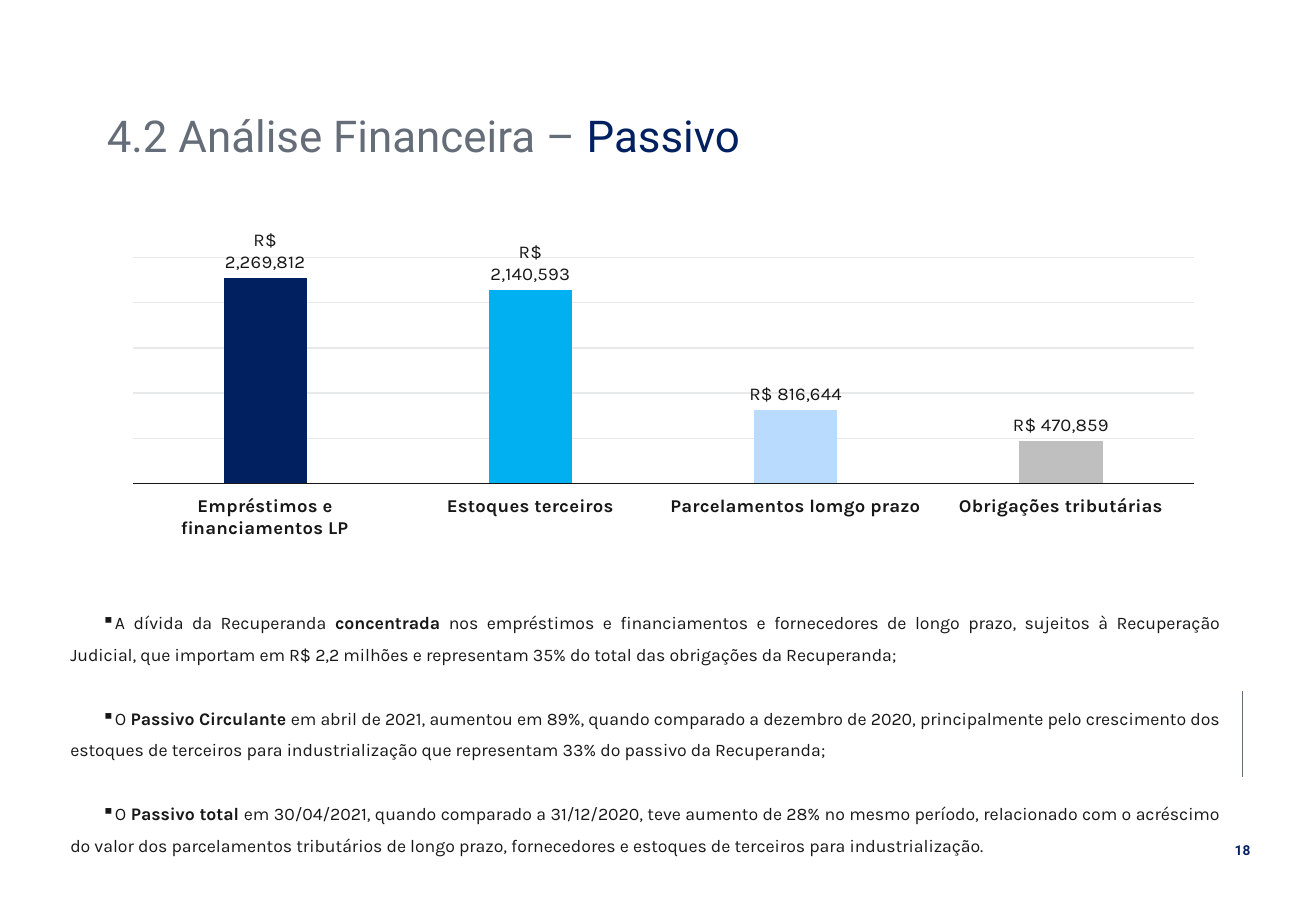
from dataclasses import dataclass

from lxml import etree
from pptx import Presentation
from pptx.chart.data import CategoryChartData
from pptx.dml.color import RGBColor
from pptx.enum.chart import XL_CHART_TYPE, XL_LABEL_POSITION, XL_TICK_LABEL_POSITION, XL_TICK_MARK
from pptx.enum.shapes import MSO_CONNECTOR
from pptx.enum.text import MSO_ANCHOR, PP_ALIGN
from pptx.oxml.ns import qn
from pptx.util import Pt

COLUMN = XL_CHART_TYPE.COLUMN_CLUSTERED
OUTSIDE = XL_LABEL_POSITION.OUTSIDE_END
LOW = XL_TICK_LABEL_POSITION.LOW
NO_TICK = XL_TICK_MARK.NONE
STRAIGHT = MSO_CONNECTOR.STRAIGHT
TOP, MIDDLE = MSO_ANCHOR.TOP, MSO_ANCHOR.MIDDLE
LEFT, CENTER, JUSTIFY = PP_ALIGN.LEFT, PP_ALIGN.CENTER, PP_ALIGN.JUSTIFY


@dataclass(frozen=True)
class Theme:
    head: str = "Roboto"
    body: str = "Karla"
    ink: str = "181717"
    gray: str = "656D78"
    navy: str = "002060"
    grid: str = "E7E9EB"
    bars: tuple = ("002060", "00B0F0", "B8DBFE", "BFBFBF")
    title_size: float = 26
    text_size: float = 10.5
    chart_size: float = 11
    page_size: float = 8.1


THEME = Theme()
MONEY = '"R$"\\ #,##0'
DEBTS = {
    "Empréstimos e financiamentos LP": 2269812,
    "Estoques terceiros": 2140593,
    "Parcelamentos lomgo prazo": 816644,
    "Obrigações tributárias": 470859,
}
NOTES = [
    ("A dívida da Recuperanda ", "concentrada",
     " nos empréstimos e financiamentos e fornecedores de longo prazo, sujeitos à "
     "Recuperação Judicial, que importam em R$ 2,2 milhões e representam 35% do total "
     "das obrigações da Recuperanda;"),
    ("O ", "Passivo Circulante ",
     "em abril de 2021, aumentou em 89%, quando comparado a dezembro de 2020, "
     "principalmente pelo crescimento dos estoques de terceiros para industrialização "
     "que representam 33% do passivo da Recuperanda;"),
    ("O ", "Passivo total ",
     "em 30/04/2021, quando comparado a 31/12/2020, teve aumento de 28% no mesmo período, "
     "relacionado com o acréscimo do valor dos parcelamentos tributários de longo prazo, "
     "fornecedores e estoques de terceiros para industrialização."),
]


def rgb(code):
    return RGBColor.from_string(code)


def style(font, face, size, color, bold=False):
    font.name = face
    font.size = Pt(size)
    font.bold = bold
    font.color.rgb = rgb(color)


def add_box(slide, x, y, w, h, anchor=TOP, wrap=True):
    frame = slide.shapes.add_textbox(Pt(x), Pt(y), Pt(w), Pt(h)).text_frame
    frame.word_wrap = wrap
    frame.vertical_anchor = anchor
    return frame


def add_run(para, text, face, size, color, bold=False):
    run = para.add_run()
    run.text = text
    style(run.font, face, size, color, bold)


def add_bullet(para, mark, indent):
    props = para._p.get_or_add_pPr()
    props.set("marL", "0")
    props.set("indent", str(Pt(indent)))
    etree.SubElement(props, qn("a:buChar")).set("char", mark)


def add_title(slide):
    para = add_box(slide, 56.2, 63, 589, 38, MIDDLE).paragraphs[0]
    para.alignment = LEFT
    para.line_spacing = 0.9
    for text, color in (("4.2 Análise Financeira – ", THEME.gray), ("Passivo", THEME.navy)):
        add_run(para, text, THEME.head, THEME.title_size, color)


def add_notes(slide):
    frame = add_box(slide, 34.6, 352.8, 696.2, 159.8)
    for index, parts in enumerate(NOTES):
        para = frame.add_paragraph() if index else frame.paragraphs[0]
        add_bullet(para, "▪", 18.7)
        para.alignment = JUSTIFY
        para.line_spacing = 1.5
        if index:
            para.space_before = Pt(18.9)
        for text, bold in zip(parts, (False, True, False)):
            add_run(para, text, THEME.body, THEME.text_size, THEME.ink, bold)


def add_page(slide):
    para = add_box(slide, 724.3, 495.4, 24.5, 17.3, wrap=False).paragraphs[0]
    para.alignment = CENTER
    add_run(para, "18", THEME.head, THEME.page_size, THEME.navy, True)


def add_rule(slide, x, top, end):
    rule = slide.shapes.add_connector(STRAIGHT, Pt(x), Pt(top), Pt(x), Pt(end))
    rule.line.color.rgb = rgb(THEME.gray)
    rule.line.width = Pt(0.5)
    etree.SubElement(rule._element.spPr, qn("a:effectLst"))


def set_plot(chart, **sides):
    area = chart._chartSpace.chart.plotArea
    for old in area.findall(qn("c:layout")):
        area.remove(old)
    layout = etree.Element(qn("c:layout"))
    area.insert(0, layout)
    manual = etree.SubElement(layout, qn("c:manualLayout"))
    rules = {"layoutTarget": "inner", "xMode": "edge", "yMode": "edge", **sides}
    for name, value in rules.items():
        etree.SubElement(manual, qn("c:" + name)).set("val", str(value))


def add_bars(slide):
    data = CategoryChartData(number_format=MONEY)
    data.categories = list(DEBTS)
    data.add_series("Series 1", list(DEBTS.values()))
    chart = slide.shapes.add_chart(
        COLUMN, Pt(65.5), Pt(136.1), Pt(655.2), Pt(183.6), data).chart
    chart.has_legend = False
    chart.has_title = False
    style(chart.font, THEME.body, THEME.chart_size, THEME.ink)
    set_plot(chart, x=0.02, y=0.09, w=0.96, h=0.75)

    names = chart.category_axis
    names.major_tick_mark = names.minor_tick_mark = NO_TICK
    names.tick_label_position = LOW
    style(names.tick_labels.font, THEME.body, THEME.chart_size, THEME.ink, True)
    names.format.line.color.rgb = rgb(THEME.ink)
    names.format.line.width = Pt(0.75)

    scale = chart.value_axis
    scale.visible = False
    scale.minimum_scale, scale.maximum_scale, scale.major_unit = 0, 2500000, 500000
    scale.has_major_gridlines = True
    scale.major_gridlines.format.line.color.rgb = rgb(THEME.grid)
    scale.major_gridlines.format.line.width = Pt(0.75)

    plot = chart.plots[0]
    plot.gap_width, plot.overlap = 219, -27
    plot.vary_by_categories = False
    series = plot.series[0]
    for index, color in enumerate(THEME.bars):
        fill = series.points[index].format.fill
        fill.solid()
        fill.fore_color.rgb = rgb(color)
    labels = series.data_labels
    labels.show_value = True
    labels.position = OUTSIDE
    labels.number_format = MONEY
    labels.number_format_is_linked = False
    style(labels.font, THEME.body, THEME.chart_size, THEME.ink)


def main():
    deck = Presentation()
    deck.slide_width, deck.slide_height = Pt(780), Pt(540)
    slide = deck.slides.add_slide(deck.slide_layouts[6])
    add_rule(slide, 736.6, 409.7, 460.8)
    add_page(slide)
    add_title(slide)
    add_notes(slide)
    add_bars(slide)
    deck.save("out.pptx")


if __name__ == "__main__":
    main()
